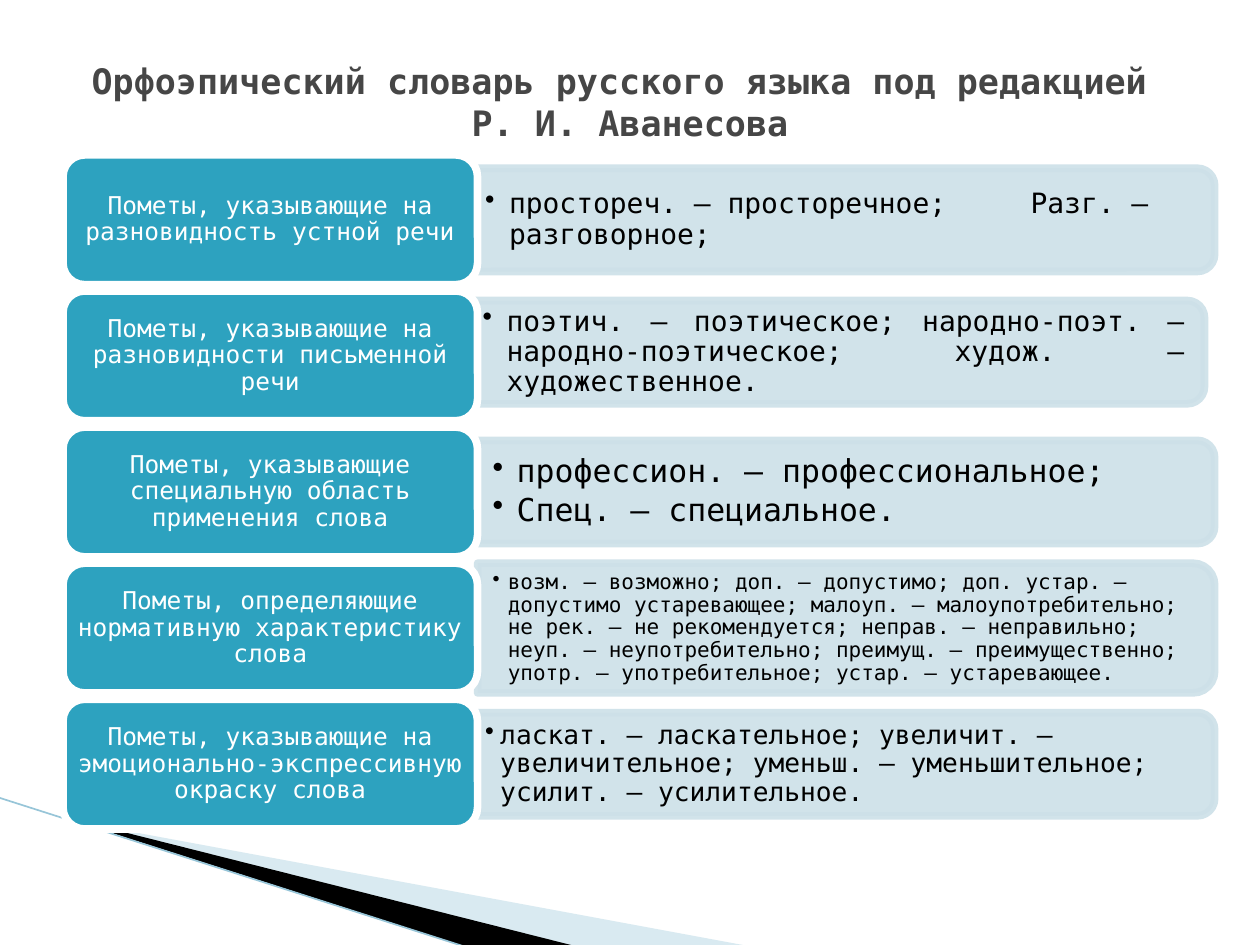
from dataclasses import dataclass

from lxml.etree import SubElement
from pptx import Presentation
from pptx.dml.color import RGBColor
from pptx.enum.shapes import MSO_CONNECTOR, MSO_SHAPE
from pptx.enum.text import MSO_ANCHOR, MSO_AUTO_SIZE, PP_ALIGN
from pptx.oxml.ns import qn
from pptx.util import Inches, Pt


@dataclass(frozen=True)
class Theme:
    font: str = "DejaVu Sans Mono"
    title: str = "464646"
    text: str = "000000"
    white: str = "FFFFFF"
    label: str = "2DA2BF"
    panel: str = "CDE0E8"
    wedge: str = "A0CBDC"
    stroke: str = "97C5D8"
    title_size: int = 20
    label_size: int = 14
    border: float = 4.33


@dataclass(frozen=True)
class Row:
    label: str
    notes: tuple
    size: int
    indent: float = 0.19
    inset: float = 0.12
    height: float = 0.82
    dx: float = 0
    dy: float = 0
    align: PP_ALIGN = PP_ALIGN.LEFT
    tab: float = 0


# Grid in inches: two columns, rows at an equal pitch
LABEL_X, LABEL_W, LABEL_H = 0.5, 3.29, 1.03
PANEL_X, PANEL_W = LABEL_X + LABEL_W, 5.85
FIRST_ROW, PITCH = 1.745, 1.08


class SlideBuilder:
    def __init__(self, slide, theme):
        self.s, self.theme = slide, theme

    def paint(self, color_format, color, alpha=100):
        color_format.fore_color.rgb = RGBColor.from_string(color)
        if alpha < 100:
            clr = color_format._xPr.find(".//" + qn("a:srgbClr"))
            SubElement(clr, qn("a:alpha"), val=str(alpha * 1000))

    def style(self, sp, fill, alpha=100, line=None):
        sp.shadow.inherit = False
        sp.fill.solid()
        self.paint(sp.fill, fill, alpha)
        if line is None:
            sp.line.fill.background()
            return
        sp.line.width = Pt(self.theme.border)
        sp.line.fill.solid()
        self.paint(sp.line.fill, line, alpha)

    def frame(self, sp, inset_x, inset_y):
        tf = sp.text_frame
        tf.word_wrap = True
        tf.auto_size = MSO_AUTO_SIZE.NONE
        tf.vertical_anchor = MSO_ANCHOR.MIDDLE
        tf.margin_left = tf.margin_right = Inches(inset_x)
        tf.margin_top = tf.margin_bottom = Inches(inset_y)
        return tf

    def run(self, p, text, size, color, bold=False):
        r = p.add_run()
        r.text = text
        r.font.name, r.font.size, r.font.bold = self.theme.font, Pt(size), bold
        r.font.color.rgb = RGBColor.from_string(color)

    def title(self, lines):
        sp = self.s.shapes.title
        sp.left, sp.top, sp.width, sp.height = map(Inches, (0.5, 0.3, 9, 1.01))
        p = self.frame(sp, 0.1, 0.05).paragraphs[0]
        p.alignment = PP_ALIGN.CENTER
        for i, line in enumerate(lines):
            if i:
                p.add_line_break()
            self.run(p, line, self.theme.title_size, self.theme.title, bold=True)

    def wedge(self, points, color, alpha=100):
        start, *rest = [(Inches(x), Inches(y)) for x, y in points]
        builder = self.s.shapes.build_freeform(*start)
        builder.add_line_segments(rest, close=True)
        self.style(builder.convert_to_shape(), color, alpha)

    def line(self, x1, y1, x2, y2):
        c = self.s.shapes.add_connector(
            MSO_CONNECTOR.STRAIGHT, *map(Inches, (x1, y1, x2, y2)))
        c.line.width = Pt(0.95)
        c.line.color.rgb = RGBColor.from_string(self.theme.stroke)
        SubElement(c._element.spPr, qn("a:effectLst"))

    def panel(self, row, mid):
        # A quarter turn puts the two rounded corners on the right
        x, mid = PANEL_X + row.dx, mid + row.dy
        sp = self.s.shapes.add_shape(
            MSO_SHAPE.ROUND_2_SAME_RECTANGLE,
            Inches(x + (PANEL_W - row.height) / 2), Inches(mid - PANEL_W / 2),
            Inches(row.height), Inches(PANEL_W))
        sp.rotation = 90
        self.style(sp, self.theme.panel, 90, self.theme.panel)

    def notes(self, row, mid):
        h = row.height * 0.9
        box = self.s.shapes.add_textbox(
            Inches(PANEL_X + row.dx), Inches(mid + row.dy - h / 2),
            Inches(PANEL_W - 0.04), Inches(h))
        tf = self.frame(box, row.inset, row.inset / 2)
        for i, note in enumerate(row.notes):
            p = tf.add_paragraph() if i else tf.paragraphs[0]
            p.level, p.alignment, p.line_spacing = 1, row.align, 0.9
            p.space_after = Pt(row.size * 0.15)
            pPr = p._p.get_or_add_pPr()
            pPr.set("marL", str(Inches(row.indent)))
            pPr.set("indent", str(-Inches(row.indent)))
            SubElement(pPr, qn("a:buChar"), char="•")
            if row.tab:
                tabs = SubElement(pPr, qn("a:tabLst"))
                SubElement(tabs, qn("a:tab"), pos=str(Inches(row.tab)), algn="l")
            self.run(p, note, row.size, self.theme.text)

    def label(self, text, mid):
        sp = self.s.shapes.add_shape(
            MSO_SHAPE.ROUNDED_RECTANGLE, Inches(LABEL_X), Inches(mid - LABEL_H / 2),
            Inches(LABEL_W), Inches(LABEL_H))
        self.style(sp, self.theme.label, line=self.theme.white)
        # The rounded corners add their own 0.05 inch to the insets
        p = self.frame(sp, 0.06, 0.03).paragraphs[0]
        p.alignment, p.line_spacing = PP_ALIGN.CENTER, 0.9
        self.run(p, text, self.theme.label_size, self.theme.white)


ROWS = [
    Row("Пометы, указывающие на разновидность устной речи",
        ("простореч. – просторечное;\tРазг. – разговорное;",),
        16, inset=0.06, tab=4.33),
    Row("Пометы, указывающие на разновидности письменной речи",
        ("поэтич. – поэтическое; народно-поэт. – народно-поэтическое; "
         "худож. – художественное.",),
        16, dx=-0.08, dy=-0.03, align=PP_ALIGN.JUSTIFY),
    Row("Пометы, указывающие специальную область применения слова",
        ("профессион. – профессиональное;", "Спец. – специальное."), 18),
    Row("Пометы, определяющие нормативную характеристику слова",
        ("возм. – возможно; доп. – допустимо; доп. устар. – допустимо "
         "устаревающее; малоуп. – малоупотребительно; не рек. – не "
         "рекомендуется; неправ. – неправильно; неуп. – неупотребительно; "
         "преимущ. – преимущественно; употр. – употребительное; "
         "устар. – устаревающее.",),
        12, indent=0.12, height=1.03),
    Row("Пометы, указывающие на эмоционально-экспрессивную окраску слова",
        ("ласкат. – ласкательное; увеличит. – увеличительное; "
         "уменьш. – уменьшительное; усилит. – усилительное.",),
        15, indent=0.12, inset=0.06),
]


def main():
    prs = Presentation()
    prs.slide_width, prs.slide_height = Inches(10), Inches(7.5)
    theme = Theme()
    b = SlideBuilder(prs.slides.add_slide(prs.slide_layouts[5]), theme)

    # Corner decoration
    b.wedge([(0.55, 6.51), (5.95, 7.51), (4.56, 7.51), (0.55, 6.5)], theme.wedge, 40)
    b.wedge([(0.53, 6.49), (4.57, 7.51), (3.72, 7.52), (0.54, 6.5)], theme.text)
    b.line(-0.01, 6.33, 3.71, 7.52)

    # Title
    b.title(["Орфоэпический словарь русского языка под редакцией ",
             "Р. И. Аванесова"])

    # Label and notes of each row
    for i, row in enumerate(ROWS):
        mid = FIRST_ROW + i * PITCH
        b.panel(row, mid)
        b.notes(row, mid)
        b.label(row.label, mid)

    prs.save("out.pptx")


if __name__ == "__main__":
    main()
